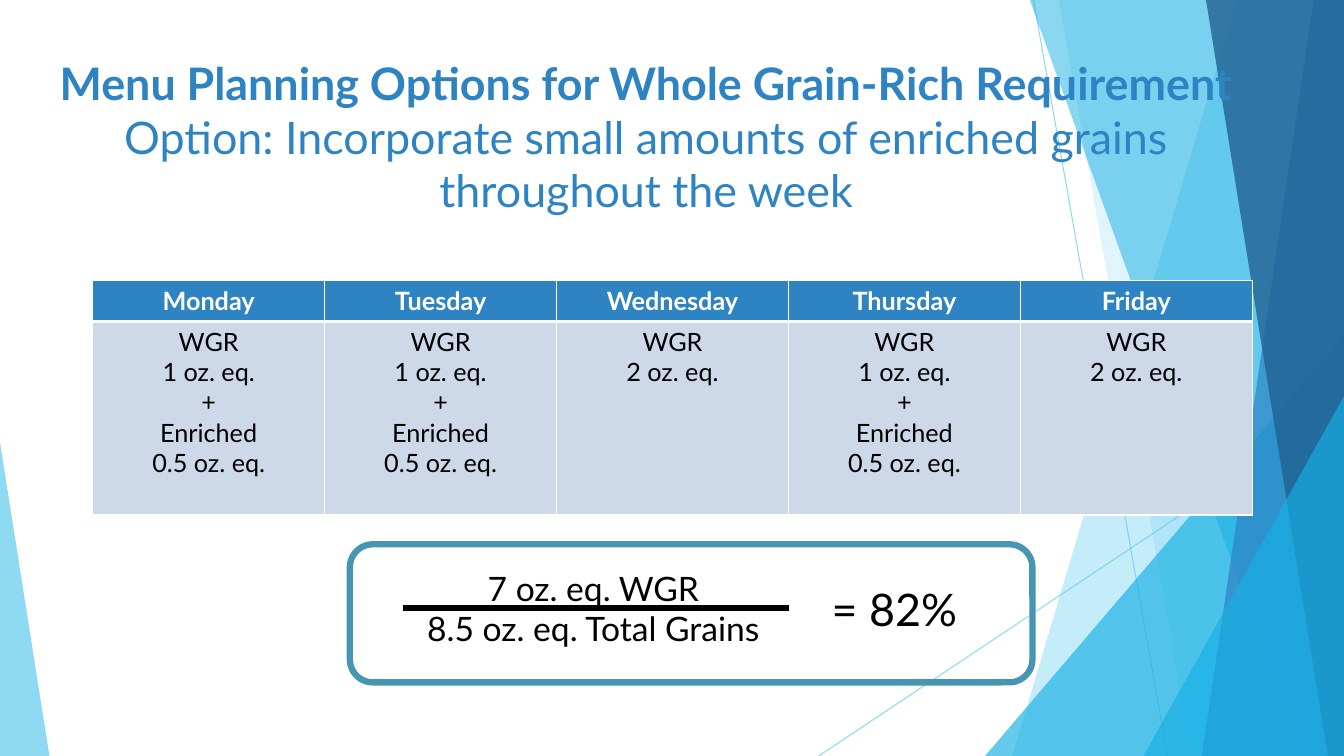
import pptx
import pptx.dml.color
import pptx.enum.shapes
import pptx.enum.text
import pptx.oxml
import pptx.oxml.ns
import pptx.util

Inches, Pt = pptx.util.Inches, pptx.util.Pt
Shape = pptx.enum.shapes.MSO_SHAPE
Align = pptx.enum.text.PP_ALIGN
Anchor = pptx.enum.text.MSO_ANCHOR
Fit = pptx.enum.text.MSO_AUTO_SIZE

FONT = "Lato"
SKY, CYAN, BLUE, NAVY = "5FCBEF", "17B0E4", "2E83C3", "226292"
WHITE, BLACK, PALE, TEAL = "FFFFFF", "000000", "CDD9E9", "4696B1"

TITLE = "Menu Planning Options for Whole Grain-Rich Requirement"
OPTION = "Option: Incorporate small amounts of enriched grains throughout the week"
MIXED = ["WGR", "1 oz. eq.", "+", "Enriched", "0.5 oz. eq."]
WHOLE = ["WGR", "2 oz. eq."]
MENU = {"Monday": MIXED, "Tuesday": MIXED, "Wednesday": WHOLE,
        "Thursday": MIXED, "Friday": WHOLE}
RATIO = ["7 oz. eq. WGR", "8.5 oz. eq. Total Grains"]
RESULT = ["= 82%"]

WIDE, HIGH, TOP = 13.33, 7.5, -0.01
RAYS = [((10.25, 0), (11.58, HIGH)), ((WIDE, 4.03), (8.12, HIGH))]
# Bands reach the right edge: top-left x, bottom-left x, colour, opacity.
# Triangles: box, apex position, colour, opacity.
DECOR = [
    (12.27, 10.04, SKY, 36),
    (10.5, 11.82, SKY, 20),
    ((9.77, 3.33, 3.56, 4.17), 1, CYAN, 66),
    (10.21, 12.91, CYAN, 50),
    (13.03, 11.92, BLUE, 70),
    (11.96, 13.17, NAVY, 80),
    ((11.34, 3.93, 1.99, 3.57), 1, CYAN, 66),
    ((0, 4.39, 0.49, 3.11), 0, SKY, 70),
]


def rgb(code):
    return pptx.dml.color.RGBColor.from_string(code)


def inches(nums):
    return [Inches(n) for n in nums]


def fade(part, level):
    """Set the opacity, in percent, of the colour inside an element."""
    tag = pptx.oxml.ns.qn("a:srgbClr")
    for color in part.iter(tag):
        alpha = color.makeelement(pptx.oxml.ns.qn("a:alpha"), {"val": str(level * 1000)})
        color.append(alpha)


def style(font, size, color, bold=False):
    looks = {"name": FONT, "size": Pt(size), "bold": bold}
    for key, value in looks.items():
        setattr(font, key, value)
    font.color.rgb = rgb(color)


def write(frame, lines, size, color, bold=False, align=Align.CENTER):
    for i, line in enumerate(lines):
        para = frame.paragraphs[0] if i == 0 else frame.add_paragraph()
        para.alignment = align
        run = para.add_run()
        run.text = line
        style(run.font, size, color, bold)


def rule(slide, start, end, color, width):
    line = slide.shapes.add_connector(
        pptx.enum.shapes.MSO_CONNECTOR.STRAIGHT, *inches(start + end))
    line.line.color.rgb = rgb(color)
    line.line.width = Pt(width)
    props = line._element.spPr
    props.append(props.makeelement(pptx.oxml.ns.qn("a:effectLst"), {}))
    return props


def decorate(slide):
    for start, end in RAYS:
        fade(rule(slide, start, end, SKY, 0.75), 70)
    for place, mark, color, level in DECOR:
        if isinstance(place, tuple):
            shape = slide.shapes.add_shape(Shape.ISOSCELES_TRIANGLE, *inches(place))
            shape.adjustments[0] = mark
        else:
            spots = [(WIDE, TOP), (WIDE, HIGH), (mark, HIGH)]
            form = slide.shapes.build_freeform(Inches(place), Inches(TOP))
            form.add_line_segments([inches(s) for s in spots], close=True)
            shape = form.convert_to_shape()
        shape.shadow.inherit = False
        shape.line.fill.background()
        shape.fill.solid()
        shape.fill.fore_color.rgb = rgb(color)
        fade(shape._element.spPr, level)


def head(slide):
    title = slide.shapes.title
    slide.shapes._spTree.append(title._element)  # bring in front of the bands
    title.left, title.top, title.width, title.height = inches((0.16, 0.5, 12.5, 1.99))
    frame = title.text_frame
    frame.word_wrap = True
    frame.auto_size = Fit.NONE
    frame.vertical_anchor = Anchor.TOP
    write(frame, [TITLE], 32, BLUE, True)
    para = frame.paragraphs[0]
    para.line_spacing = 1.0
    para.add_line_break()
    run = para.add_run()
    run.text = OPTION
    style(run.font, 32, BLUE)


def edge(cell, sides):
    """Add white borders; sides maps each side to its width in points."""
    props = cell._tc.get_or_add_tcPr()
    for i, (side, width) in enumerate(sides.items()):
        props.insert(i, pptx.oxml.parse_xml(
            f'<a:ln{side} {pptx.oxml.ns.nsdecls("a")} w="{Pt(width)}"><a:solidFill>'
            f'<a:srgbClr val="{WHITE}"/></a:solidFill></a:ln{side}>'))


def menu(slide):
    box = inches((0.92, 2.78, 11.5, 2.33))
    table = slide.shapes.add_table(2, len(MENU), *box).table
    for row, high in zip(table.rows, (0.41, 1.92)):
        row.height = Inches(high)
    for col, (day, food) in enumerate(MENU.items()):
        table.columns[col].width = Inches(2.3)
        kinds = [([day], WHITE, True, BLUE, 1, 3), (food, BLACK, False, PALE, 3, 1)]
        for row, (lines, ink, bold, fill, top, base) in enumerate(kinds):
            cell = table.cell(row, col)
            write(cell.text_frame, lines, 18, ink, bold)
            cell.fill.solid()
            cell.fill.fore_color.rgb = rgb(fill)
            edge(cell, {"L": 1, "R": 1, "T": top, "B": base})


def label(slide, place, lines, size, align):
    frame = slide.shapes.add_textbox(*inches(place)).text_frame
    frame.word_wrap = True
    frame.auto_size = Fit.SHAPE_TO_FIT_TEXT
    write(frame, lines, size, BLACK, align=align)


def share(slide):
    box = slide.shapes.add_shape(Shape.ROUNDED_RECTANGLE, *inches((3.47, 5.4, 6.77, 1.37)))
    box.shadow.inherit = False
    box.fill.background()
    box.line.color.rgb = rgb(TEAL)
    box.line.width = Pt(4.5)
    label(slide, (4.07, 5.58, 3.63, 0.91), RATIO, 24, Align.CENTER)
    rule(slide, (4, 6.03), (7.83, 6.03), BLACK, 4.5)
    label(slide, (8.15, 5.72, 1.97, 0.64), RESULT, 32, Align.LEFT)


def main():
    deck = pptx.Presentation()
    deck.slide_width, deck.slide_height = inches((WIDE, HIGH))
    slide = deck.slides.add_slide(deck.slide_layouts[5])
    for draw in (decorate, head, menu, share):
        draw(slide)
    deck.save("out.pptx")


if __name__ == "__main__":
    main()
